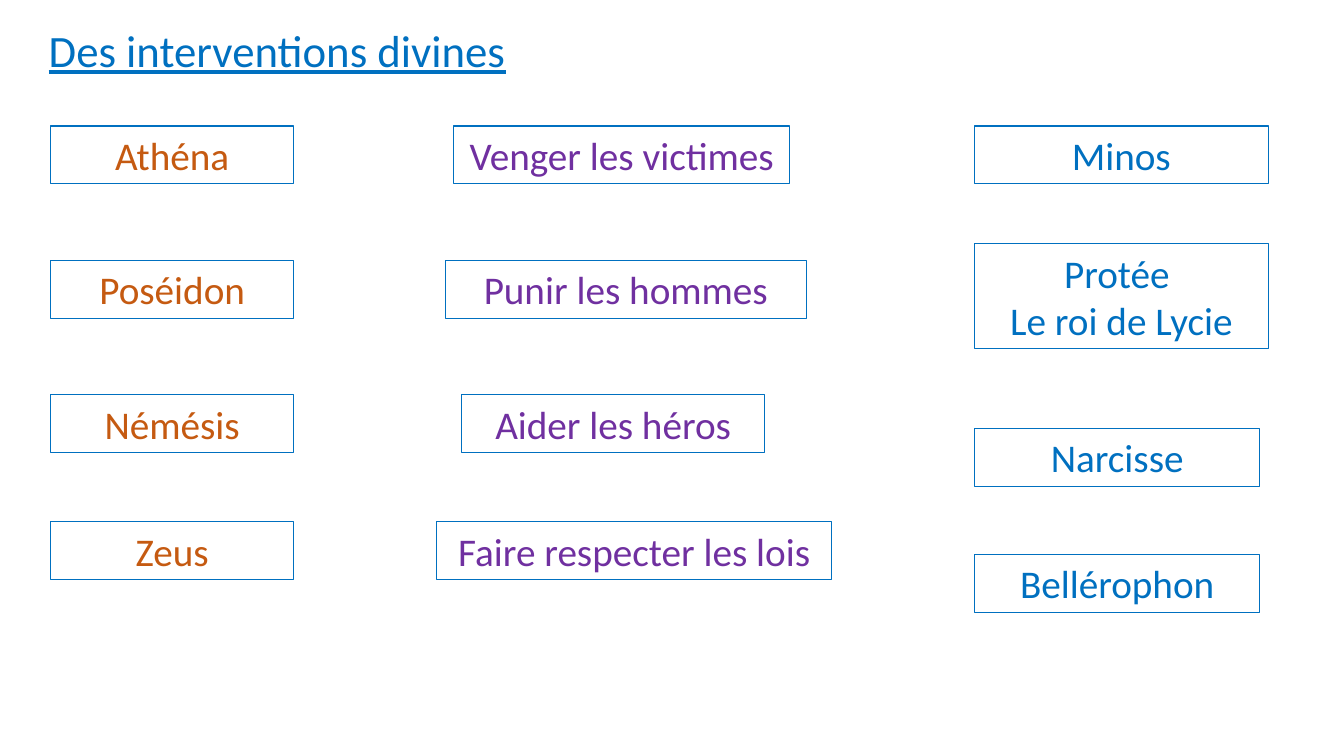
from dataclasses import dataclass

from pptx import Presentation
from pptx.dml.color import RGBColor
from pptx.enum import shapes, text
from pptx.util import Emu, Pt

PX = 9525  # EMU per px, 96 px to the inch


@dataclass(frozen=True)
class Theme:
    font: str = "Calibri"
    title_size: int = 32
    label_size: int = 28
    border_width: float = 0.75
    blue: str = "0070C0"
    orange: str = "C55A11"
    purple: str = "7030A0"


THEME = Theme()
ROW_TOPS = (120, 248, 376, 497)
LABEL_HEIGHT = 55
GODS_LEFT, GODS_WIDTH = 48, 232
MORTALS_LEFT = 928

GODS = ("Athéna", "Poséidon", "Némésis", "Zeus")
# wording, left, width
ACTIONS = (
    ("Venger les victimes", 432, 320),
    ("Punir les hommes", 424, 344),
    ("Aider les héros", 440, 288),
    ("Faire respecter les lois", 416, 376),
)
# wording, top, width, height
MORTALS = (
    ("Minos", 120, 280, LABEL_HEIGHT),
    ("Protée \nLe roi de Lycie", 232, 280, 100),
    ("Narcisse", 408, 272, LABEL_HEIGHT),
    ("Bellérophon", 528, 272, LABEL_HEIGHT),
)


def px(*lengths):
    return [Emu(length * PX) for length in lengths]


def write(frame, wording, *, size, color, underline=None):
    frame.word_wrap = True
    frame.auto_size = text.MSO_AUTO_SIZE.SHAPE_TO_FIT_TEXT
    frame.text = wording
    for line in frame.paragraphs:
        line.alignment = text.PP_ALIGN.CENTER
        for run in line.runs:
            run.font.name = THEME.font
            run.font.size = Pt(size)
            run.font.underline = underline
            run.font.color.rgb = RGBColor.from_string(color)


def add_title(slide, wording, left, top, width, height):
    title = slide.shapes.add_textbox(*px(left, top, width, height))
    write(title.text_frame, wording, size=THEME.title_size,
          color=THEME.blue, underline=True)


def add_label(slide, wording, left, top, width, color, height=LABEL_HEIGHT):
    label = slide.shapes.add_shape(
        shapes.MSO_SHAPE.RECTANGLE, *px(left, top, width, height))
    label.shadow.inherit = False
    label.fill.background()
    label.line.color.rgb = RGBColor.from_string(THEME.blue)
    label.line.width = Pt(THEME.border_width)
    write(label.text_frame, wording, size=THEME.label_size, color=color)


def main():
    deck = Presentation()
    deck.slide_width, deck.slide_height = px(1280, 720)
    slide = deck.slides.add_slide(deck.slide_layouts[6])

    add_title(slide, "Des interventions divines", -16, 17, 560, 61)

    # Gods and what they do, row by row
    for top, god, (action, left, width) in zip(ROW_TOPS, GODS, ACTIONS):
        add_label(slide, god, GODS_LEFT, top, GODS_WIDTH, THEME.orange)
        add_label(slide, action, left, top, width, THEME.purple)

    # Those on whom the gods act
    for mortal, top, width, height in MORTALS:
        add_label(slide, mortal, MORTALS_LEFT, top, width, THEME.blue, height)

    deck.save("out.pptx")


if __name__ == "__main__":
    main()
